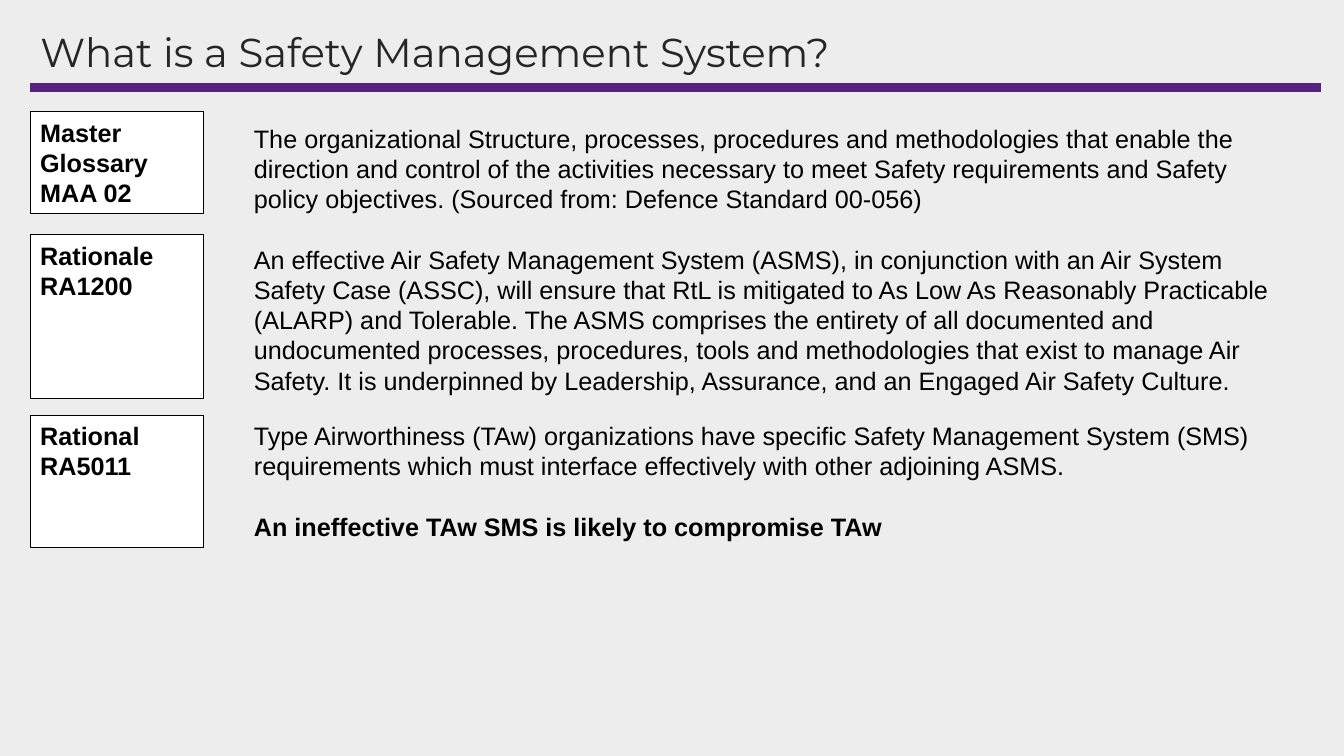
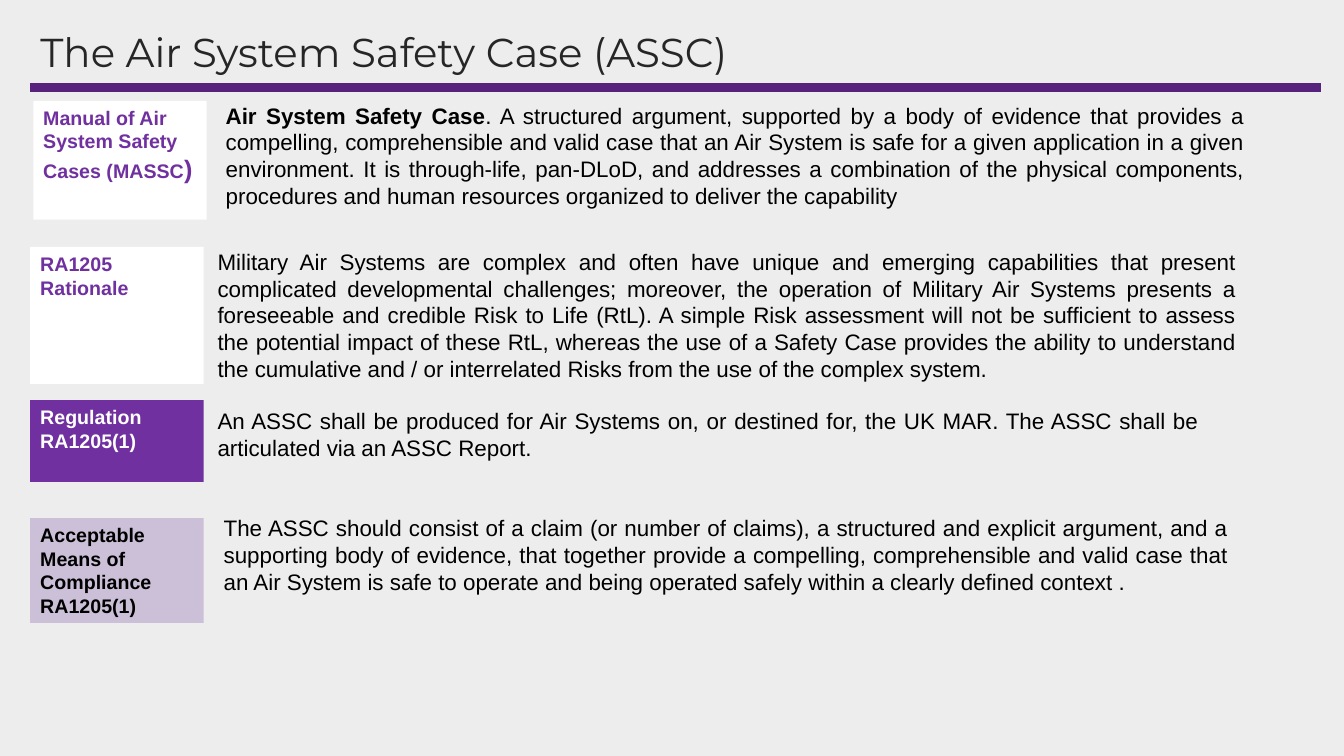
from dataclasses import dataclass

from lxml.etree import SubElement
from pptx import Presentation
from pptx.dml.color import RGBColor
from pptx.enum.shapes import MSO_CONNECTOR, MSO_SHAPE
from pptx.enum.text import MSO_ANCHOR, MSO_AUTO_SIZE, PP_ALIGN
from pptx.oxml.ns import qn
from pptx.util import Inches, Pt


@dataclass(frozen=True)
class Theme:
    background: RGBColor = RGBColor.from_string("EDEDED")
    rule: RGBColor = RGBColor.from_string("56227D")
    title: RGBColor = RGBColor.from_string("262626")
    black: RGBColor = RGBColor.from_string("000000")
    white: RGBColor = RGBColor.from_string("FFFFFF")
    purple: RGBColor = RGBColor.from_string("7030A0")
    lilac: RGBColor = RGBColor.from_string("CCC0D8")
    title_font: str = "Montserrat"
    body_font: str = "Arial"
    title_size: Pt = Pt(28.8)
    large_size: Pt = Pt(18)
    medium_size: Pt = Pt(16)
    small_size: Pt = Pt(14)


theme = Theme()
margin = 0.3
label_width = 1.72


def write(shape, paragraphs, size, colour, bold=False, align=PP_ALIGN.LEFT):
    frame = shape.text_frame
    frame.word_wrap = True
    frame.vertical_anchor = MSO_ANCHOR.TOP
    for index, spans in enumerate(paragraphs):
        para = frame.paragraphs[0] if index == 0 else frame.add_paragraph()
        para.alignment = align
        for text in spans:
            span = para.add_run()
            span.text = text
            span.font.name = theme.body_font
            span.font.size = size
            span.font.bold = bold
            span.font.color.rgb = colour
    return frame


def add_label(page, left, top, height, paragraphs, size, fill, colour, line=None):
    box = page.shapes.add_shape(
        MSO_SHAPE.RECTANGLE, Inches(left), Inches(top), Inches(label_width), Inches(height)
    )
    box.shadow.inherit = False
    box.fill.solid()
    box.fill.fore_color.rgb = fill
    if line is None:
        box.line.fill.background()
    else:
        box.line.color.rgb = line
        box.line.width = Pt(0.75)
    return write(box, paragraphs, size, colour, bold=True)


deck = Presentation()
deck.slide_width = Inches(13.33)
deck.slide_height = Inches(7.5)
deck.slide_master.background.fill.solid()
deck.slide_master.background.fill.fore_color.rgb = theme.background

layout = deck.slide_layouts.get_by_name("Title Only")
heading = layout.placeholders[0]
heading.left, heading.top = Inches(margin), Inches(0.28)
heading.width, heading.height = Inches(12.8), Inches(0.53)

pages = []
for title in ("What is a Safety Management System?", "The Air System Safety Case (ASSC)"):
    page = deck.slides.add_slide(layout)
    frame = page.shapes.title.text_frame
    frame.text = title
    frame.auto_size = MSO_AUTO_SIZE.NONE
    frame.vertical_anchor = MSO_ANCHOR.MIDDLE
    para = frame.paragraphs[0]
    para.alignment = PP_ALIGN.LEFT
    para.line_spacing = 0.9
    font = para.runs[0].font
    font.name = theme.title_font
    font.size = theme.title_size
    font.color.rgb = theme.title
    pages.append(page)
system_page, case_page = pages

rule = system_page.shapes.add_connector(
    MSO_CONNECTOR.STRAIGHT, Inches(margin), Inches(0.87), Inches(13.1), Inches(0.87)
)
rule.line.color.rgb = theme.rule
rule.line.width = Pt(6)
SubElement(rule.element.spPr, qn("a:effectLst"))
layout.shapes.element.append(rule.element)

system_rows = [
    (1.11, 1.01, [["Master Glossary"], ["MAA 02"]], 1.17, 10.3, [[
        "The organizational Structure, processes, procedures and methodologies that enable the "
        "direction and control of the activities necessary to meet Safety requirements and Safety "
        "policy objectives. (Sourced from: Defence Standard 00-056)"
    ]]),
    (2.33, 1.62, [["Rationale"], ["RA1200"]], 2.37, 10.5, [[
        "An effective Air Safety Management System (ASMS), in conjunction with an Air System "
        "Safety Case (ASSC), will ensure that RtL is mitigated to As Low As Reasonably Practicable "
        "(ALARP) and Tolerable. The ASMS comprises the entirety of all documented and "
        "undocumented processes, procedures, tools and methodologies that exist to manage Air "
        "Safety. It is underpinned by Leadership, Assurance, and an Engaged Air Safety Culture."
    ]]),
    (4.12, 1.31, [["Rational"], ["RA5011"]], 4.12, 10.3, [
        ["Type Airworthiness (TAw) organizations have specific Safety Management System (SMS) "
         "requirements which must interface effectively with other adjoining ASMS."],
        ["An ineffective TAw SMS is likely to compromise TAw"],
    ]),
]
for top, height, label, text_top, text_width, text in system_rows:
    add_label(system_page, margin, top, height, label,
              theme.large_size, theme.white, theme.black, theme.black)
    box = system_page.shapes.add_textbox(
        Inches(2.42), Inches(text_top), Inches(text_width), Inches(height)
    )
    frame = write(box, text, theme.large_size, theme.black)
conclusion = frame.paragraphs[1]
conclusion.space_before = Pt(21.6)
conclusion.runs[0].font.bold = True

case_rows = [
    (0.33, 1, 1.18, theme.white, theme.purple,
     [["Manual of Air System Safety Cases (MASSC", ")"]],
     2.14, 0.96, 10.3, 1.18, [
         "Air System Safety Case",
         ". A structured argument, supported by a body of evidence that provides a compelling, "
         "comprehensible and valid case that an Air System is safe for a given application in a "
         "given environment. It is through-life, pan-DLoD, and addresses a combination of the "
         "physical components, procedures and human resources organized to deliver the capability",
     ]),
    (margin, 2.45, 1.36, theme.white, theme.purple, [["RA1205"], ["Rationale"]],
     2.06, 2.41, 10.3, 1.45, [
         "Military Air Systems are complex and often have unique and emerging capabilities that "
         "present complicated developmental challenges; moreover, the operation of Military Air "
         "Systems presents a foreseeable and credible Risk to Life (RtL). A simple Risk assessment "
         "will not be sufficient to assess the potential impact of these RtL, whereas the use of a "
         "Safety Case provides the ability to understand the cumulative and / or interrelated "
         "Risks from the use of the complex system."
     ]),
    (margin, 3.97, 0.81, theme.purple, theme.white, [["Regulation"], ["RA1205(1)"]],
     2.06, 3.99, 9.93, 0.64, [
         "An ASSC shall be produced for Air Systems on, or destined for, the UK MAR. The ASSC "
         "shall be articulated via an ASSC Report."
     ]),
    (margin, 5.14, 1.04, theme.lilac, theme.black, [["Acceptable Means of Compliance RA1205(1)"]],
     2.12, 5.05, 10.16, 0.91, [
         "The ASSC should consist of a claim (or number of claims), a structured and explicit "
         "argument, and a supporting body of evidence, that together provide a compelling, "
         "comprehensible and valid case that an Air System is safe to operate and being operated "
         "safely within a clearly defined context ."
     ]),
]
for (left, top, height, fill, colour, label,
     text_left, text_top, text_width, text_height, spans) in case_rows:
    label_frame = add_label(case_page, left, top, height, label, theme.small_size, fill, colour)
    box = case_page.shapes.add_textbox(
        Inches(text_left), Inches(text_top), Inches(text_width), Inches(text_height)
    )
    frame = write(box, [spans], theme.medium_size, theme.black, align=PP_ALIGN.JUSTIFY)
    if len(spans) > 1:
        frame.paragraphs[0].runs[0].font.bold = True
        label_frame.paragraphs[0].runs[1].font.size = theme.large_size

deck.save("out.pptx")
